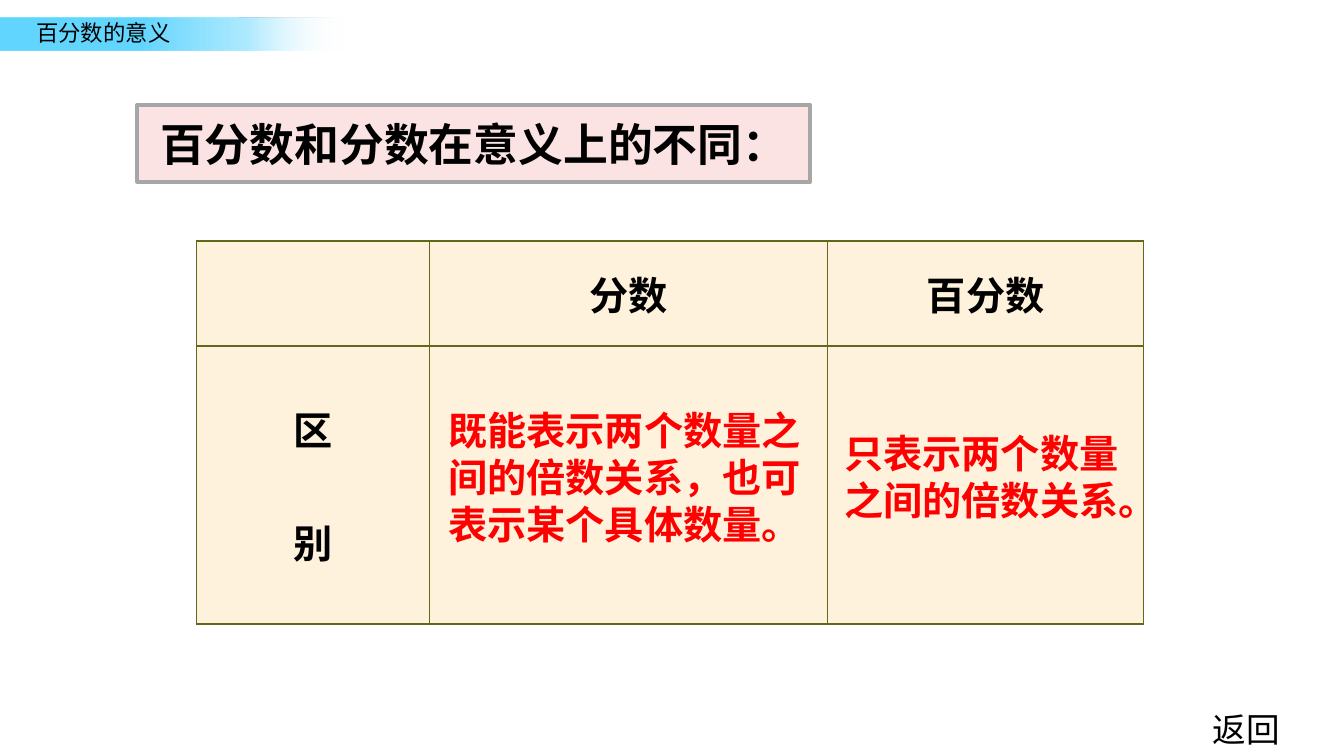
from lxml.etree import SubElement
from pptx import Presentation
from pptx.dml.color import RGBColor as Rgb
from pptx.enum.shapes import MSO_SHAPE as Shape
from pptx.enum.text import MSO_ANCHOR as Anchor, MSO_AUTO_SIZE as AutoSize, PP_ALIGN as Align
from pptx.oxml import parse_xml
from pptx.oxml.ns import nsdecls, qn
from pptx.util import Inches, Pt

WIDTH = Inches(10)
HEIGHT = WIDTH * 9 // 16
FONT = "Noto Sans CJK SC"
COLORS = {
    "ink": "000000", "answer": "FF0000", "heading": "FCE3E3", "frame": "A6A6A6",
    "cell": "FFF2DD", "grid": "60691A",
    "sky": "63D6FF", "pale_sky": "96E4FF", "white": "FFFFFF",
}
MARGINS = {
    "margin_left": Inches(0.07), "margin_right": Inches(0.07),
    "margin_top": Inches(0.04), "margin_bottom": Inches(0.04),
}
CENTERED = {"vertical_anchor": Anchor.MIDDLE}
FADE = [(40, "sky", 100), (70, "pale_sky", 76), (97, "white", 0)]
COLUMN_SHARES = [17.33, 29.63, 23.52]
ROW_SHARES = [13.88, 36.83]
LABELS = {(0, 1): ["分数"], (0, 2): ["百分数"], (1, 0): ["区", "别"]}
ANSWERS = [
    ("既能表示两个数量之间的倍数关系，也可表示某个具体数量。", (32.64, 53, 28.2, 20.27)),
    ("只表示两个数量之间的倍数关系。", (62.1, 56.05, 22.9, 13.87)),
]


def across(share):
    """Turn a percentage of the slide width into a length."""
    return round(WIDTH * share / 100)


def down(share):
    """Turn a percentage of the slide height into a length."""
    return round(HEIGHT * share / 100)


def area(left, top, width, height):
    """Turn percentages of the slide into a position and a size."""
    return across(left), down(top), across(width), down(height)


def apply(target, formats):
    """Set each attribute of the target from the format values."""
    for name, value in formats.items():
        setattr(target, name, value)


def write(frame, lines, size, color="ink", bold=False, align=Align.LEFT, gap=0):
    """Write lines as paragraphs, with a gap in points between them."""
    for index, line in enumerate(lines):
        paragraph = frame.add_paragraph() if index else frame.paragraphs[0]
        paragraph.alignment = align
        if index:
            paragraph.space_before = Pt(gap)
        run = paragraph.add_run()
        run.text = line
        apply(run.font, {"name": FONT, "size": Pt(size), "bold": bold})
        run.font.color.rgb = Rgb.from_string(COLORS[color])
        SubElement(run._r.get_or_add_rPr(), qn("a:ea"), typeface=FONT)


def add_fading_bar(slide, place):
    """Add a bar whose colour fades out to the right."""
    bar = slide.shapes.add_shape(Shape.RECTANGLE, *area(*place))
    bar.shadow.inherit = False
    bar.line.fill.background()
    bar.fill.background()
    stops = "".join(
        f'<a:gs pos="{position * 1000}"><a:srgbClr val="{COLORS[color]}">'
        f'<a:alpha val="{opacity * 1000}"/></a:srgbClr></a:gs>'
        for position, color, opacity in FADE
    )
    gradient = parse_xml(
        f'<a:gradFill {nsdecls("a")} rotWithShape="1"><a:gsLst>{stops}</a:gsLst>'
        '<a:lin ang="0" scaled="0"/></a:gradFill>'
    )
    properties = bar._element.spPr
    properties.replace(properties.find(qn("a:noFill")), gradient)


def add_label(slide, text, place, size, wrap=True, margins=MARGINS, **style):
    """Add a text box holding one paragraph."""
    frame = slide.shapes.add_textbox(*area(*place)).text_frame
    apply(frame, {"word_wrap": wrap, "auto_size": AutoSize.SHAPE_TO_FIT_TEXT, **margins})
    write(frame, [text], size, **style)


def fill_heading(heading, text, place):
    """Move, frame and fill the title placeholder."""
    apply(heading, dict(zip(("left", "top", "width", "height"), area(*place))))
    heading.fill.solid()
    heading.fill.fore_color.rgb = Rgb.from_string(COLORS["heading"])
    heading.line.color.rgb = Rgb.from_string(COLORS["frame"])
    heading.line.width = Pt(2)
    apply(heading.text_frame, {"word_wrap": True, "auto_size": AutoSize.NONE, **MARGINS, **CENTERED})
    write(heading.text_frame, [text], 24, bold=True, align=Align.CENTER)


def format_cell(cell):
    """Give a cell its fill, margins and four borders."""
    apply(cell, {**MARGINS, **CENTERED})
    cell.fill.solid()
    cell.fill.fore_color.rgb = Rgb.from_string(COLORS["cell"])
    for index, side in enumerate("LRTB"):
        border = parse_xml(
            f'<a:ln{side} {nsdecls("a")} w="{Pt(1)}"><a:solidFill>'
            f'<a:srgbClr val="{COLORS["grid"]}"/></a:solidFill></a:ln{side}>'
        )
        cell._tc.get_or_add_tcPr().insert(index, border)


def add_comparison(slide, left, top):
    """Add the table that compares fractions and percentages."""
    place = area(left, top, sum(COLUMN_SHARES), sum(ROW_SHARES))
    table = slide.shapes.add_table(len(ROW_SHARES), len(COLUMN_SHARES), *place).table
    for column, share in zip(table.columns, COLUMN_SHARES):
        column.width = across(share)
    for row, share in zip(table.rows, ROW_SHARES):
        row.height = down(share)
    for cell in table.iter_cells():
        format_cell(cell)
    for position, lines in LABELS.items():
        write(table.cell(*position).text_frame, lines, 21, bold=True, align=Align.CENTER, gap=30)


def main():
    """Build the slide and save it."""
    deck = Presentation()
    apply(deck, {"slide_width": WIDTH, "slide_height": HEIGHT})
    slide = deck.slides.add_slide(deck.slide_layouts[5])
    add_fading_bar(slide, (0, 2.4, 26.4, 4.27))
    add_label(slide, "百分数的意义", (2, 1.78, 17.3, 4.98), 12)
    add_label(slide, "返回", (89.23, 92.88, 7.1, 7.12), 18, wrap=False, margins={})
    fill_heading(slide.shapes.title, "百分数和分数在意义上的不同：", (10.2, 13.88, 50.1, 10.17))
    add_comparison(slide, 14.62, 31.85)
    for answer, place in ANSWERS:
        add_label(slide, answer, place, 21, color="answer", bold=True)
    deck.save("out.pptx")


if __name__ == "__main__":
    main()
